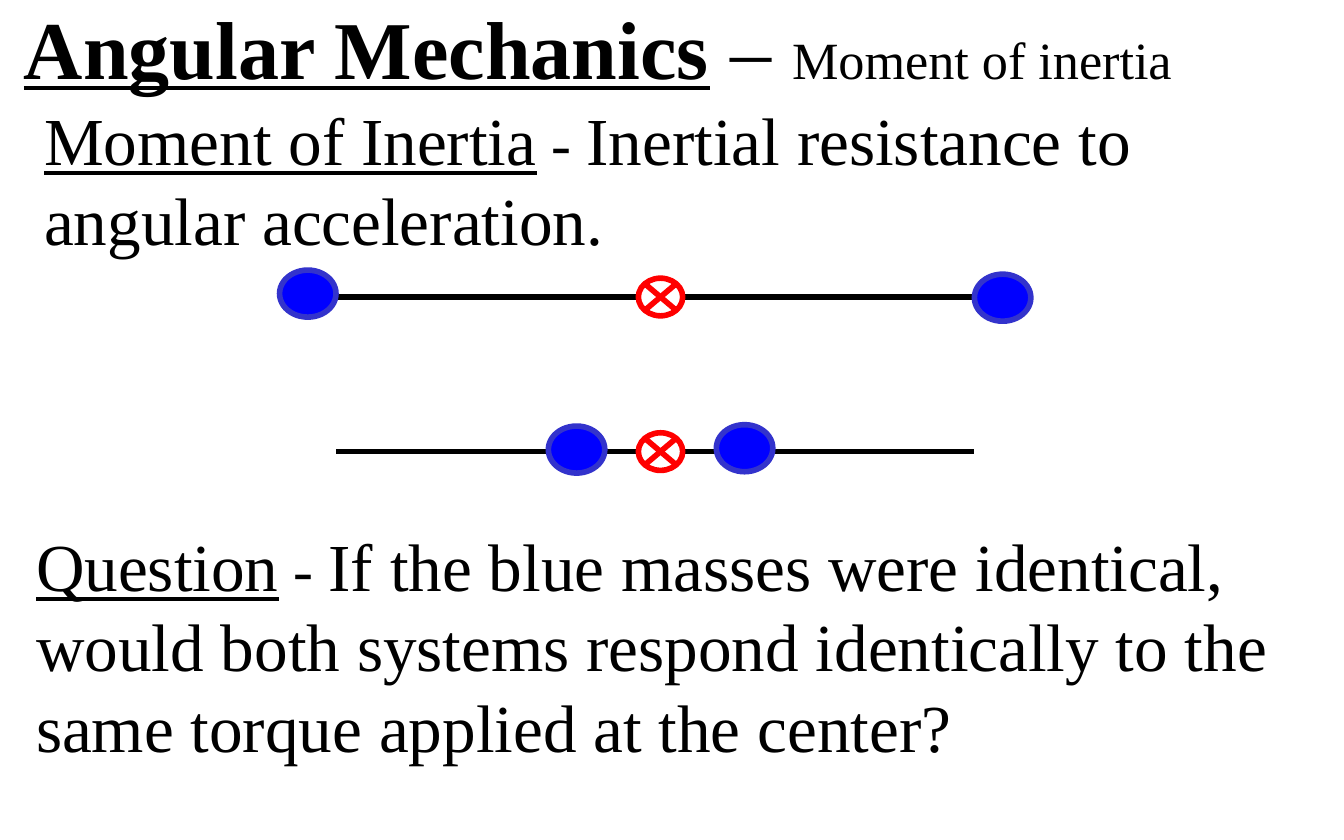
from lxml import etree
from pptx import Presentation
from pptx.dml.color import RGBColor
from pptx.enum.shapes import MSO_CONNECTOR as Connector, MSO_SHAPE as Shape
from pptx.enum.text import MSO_AUTO_SIZE as AutoSize
from pptx.oxml.ns import qn
from pptx.util import Pt

PX = 9144  # EMU per px, 100 px to the inch
FONT = "Times New Roman"
LINE_WIDTH = 3
ROD_LEFT, ROD_RIGHT = 250, 725
MASS_SIZE = (42, 35)
PIVOT_LEFT, PIVOT_SIZE = 475, (33, 28)
COLORS = {
    "background": "FFFFFF",
    "ink": "000000",
    "mass": "0000FF",
    "mass_edge": "3333CC",
    "pivot": "FF0000",
}


def px(value):
    return value * PX


def color(name):
    return RGBColor.from_string(COLORS[name])


def add_text(slide, box, runs, wrap=True):
    """Add one paragraph; each run is (text, size, bold, underline)."""
    shape = slide.shapes.add_textbox(*map(px, box))
    text_frame = shape.text_frame
    text_frame.word_wrap = wrap
    text_frame.auto_size = AutoSize.SHAPE_TO_FIT_TEXT
    paragraph = text_frame.paragraphs[0]
    for text, size, bold, underline in runs:
        run = paragraph.add_run()
        run.text = text
        font = run.font
        font.name, font.size = FONT, Pt(size)
        font.bold, font.underline = bold, underline
        font.color.rgb = color("ink")


def add_definition(slide, box, term, meaning):
    add_text(slide, box, [
        (term, 36, False, True),
        (" - ", 32, False, False),
        (meaning, 36, False, False),
    ])


def add_rod(group, y):
    rod = group.shapes.add_connector(
        Connector.STRAIGHT, px(ROD_LEFT), px(y), px(ROD_RIGHT), px(y))
    rod.line.color.rgb = color("ink")
    rod.line.width = Pt(LINE_WIDTH)
    etree.SubElement(rod._element.spPr, qn("a:effectLst"))


def add_disc(group, kind, position, size, fill, edge):
    disc = group.shapes.add_shape(kind, *map(px, position + size))
    disc.shadow.inherit = False
    disc.fill.solid()
    disc.fill.fore_color.rgb = color(fill)
    disc.line.color.rgb = color(edge)
    disc.line.width = Pt(LINE_WIDTH)


def add_system(slide, rod_y, masses):
    """Add a rod with its masses and the pivot at its middle."""
    group = slide.shapes.add_group_shape()
    add_rod(group, rod_y)
    for position in masses:
        add_disc(group, Shape.OVAL, position, MASS_SIZE, "mass", "mass_edge")
    pivot = (PIVOT_LEFT, rod_y - PIVOT_SIZE[1] // 2)
    add_disc(group, Shape.FLOWCHART_SUMMING_JUNCTION, pivot, PIVOT_SIZE,
             "background", "pivot")


def main():
    presentation = Presentation()
    presentation.slide_width, presentation.slide_height = px(1000), px(625)
    slide = presentation.slides.add_slide(presentation.slide_layouts[6])
    slide.background.fill.solid()
    slide.background.fill.fore_color.rgb = color("background")

    # Title and definition
    add_text(slide, (8, -7, 882, 84), [
        ("Angular Mechanics", 44, True, True),
        (" – ", 44, False, False),
        ("Moment of inertia", 28, False, False),
    ], wrap=False)
    add_definition(slide, (23, 68, 952, 131), "Moment of Inertia",
                   "Inertial resistance to angular acceleration.")

    # Masses far from the pivot, then close to it
    add_system(slide, 221, [(208, 201), (725, 204)])
    add_system(slide, 336, [(408, 317), (533, 316)])

    # Question
    add_definition(slide, (17, 385, 952, 192), "Question",
                   "If the blue masses were identical, would both systems "
                   "respond identically to the same torque applied at the "
                   "center?")

    presentation.save("out.pptx")


if __name__ == "__main__":
    main()
